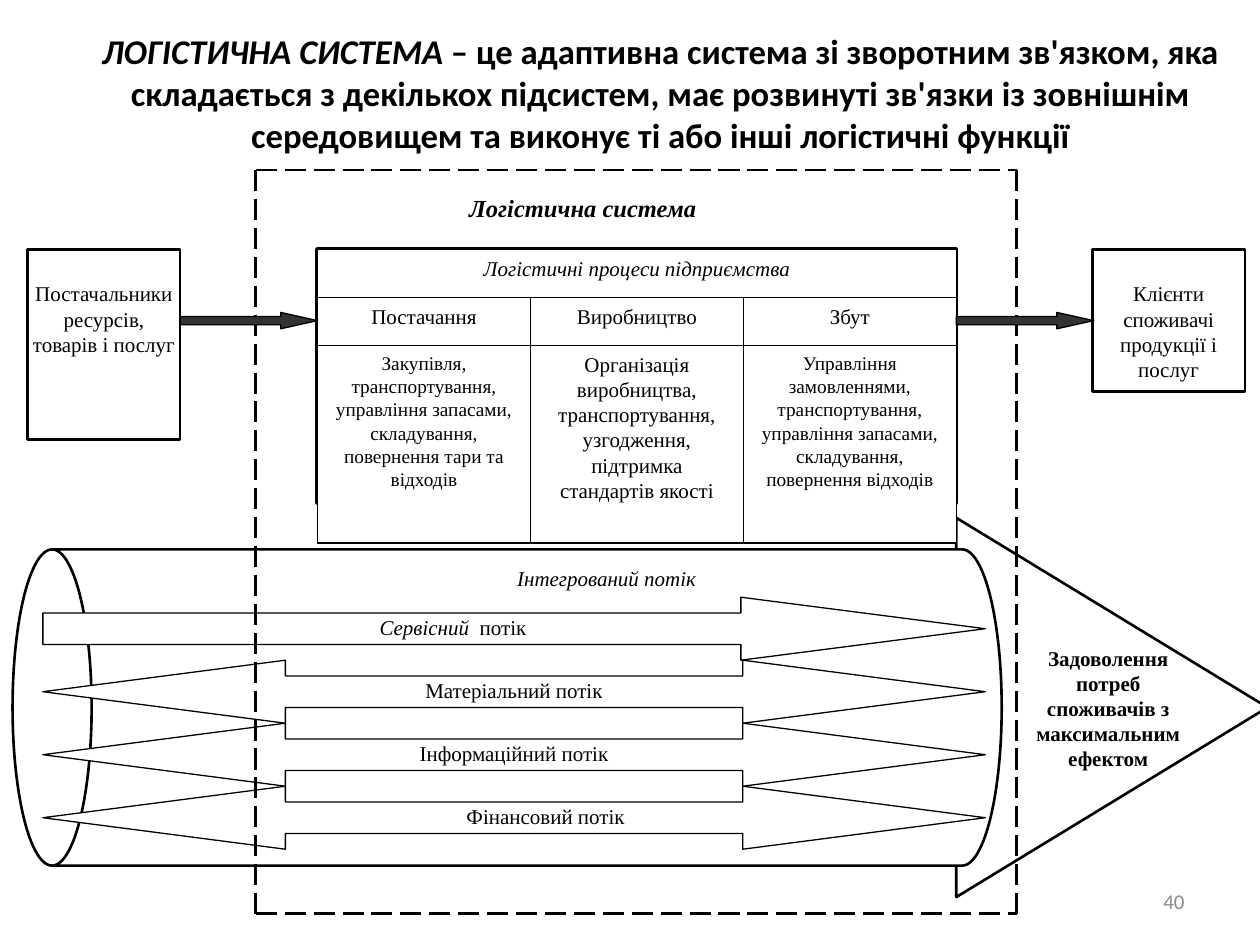
from dataclasses import dataclass

from lxml import etree
from pptx import Presentation
from pptx.dml.color import RGBColor
from pptx.enum import dml, shapes, text
from pptx.oxml import ns
from pptx.util import Inches, Pt

BLACK = RGBColor(0x00, 0x00, 0x00)
WHITE = RGBColor(0xFF, 0xFF, 0xFF)
DARK = RGBColor(0x33, 0x33, 0x33)
GREY = RGBColor(0x8C, 0x8C, 0x8C)
SERIF, SANS = "Times New Roman", "Calibri"
KIND, ALIGN, ANCHOR = shapes.MSO_SHAPE, text.PP_ALIGN, text.MSO_ANCHOR
INSET = (0.1, 0.05, 0.1, 0.05)
FLAT = (0.1, 0.01, 0.1, 0.01)


@dataclass
class Run:
    words: str
    size: float = 12
    bold: bool = False
    slant: bool = False
    font: str = SERIF
    ink: RGBColor = BLACK


@dataclass
class Box:
    left: float
    top: float
    width: float
    height: float
    runs: tuple[Run, ...] = ()
    kind: KIND = KIND.RECTANGLE
    line: float = 0.75
    inset: tuple[float, ...] = INSET
    adjust: tuple[float, ...] = ()
    turn: float = 0
    fill: RGBColor = WHITE

    def place(self) -> list[int]:
        return [Inches(n) for n in (self.left, self.top, self.width, self.height)]


def write(shape, runs: tuple[Run, ...], inset: tuple[float, ...] = INSET,
          align=ALIGN.CENTER, anchor=ANCHOR.TOP) -> None:
    frame = shape.text_frame
    frame.word_wrap = True
    frame.vertical_anchor = anchor
    (frame.margin_left, frame.margin_top,
     frame.margin_right, frame.margin_bottom) = map(Inches, inset)
    para = frame.paragraphs[0]
    para.alignment = align
    for item in runs:
        run = para.add_run()
        run.text = item.words
        font = run.font
        font.name, font.size = item.font, Pt(item.size)
        font.bold, font.italic = item.bold, item.slant
        font.color.rgb = item.ink


def draw(slide, box: Box):
    shape = slide.shapes.add_shape(box.kind, *box.place())
    shape.shadow.inherit = False
    shape.rotation = box.turn
    for spot, value in enumerate(box.adjust):
        shape.adjustments[spot] = value
    shape.fill.solid()
    shape.fill.fore_color.rgb = box.fill
    if box.line:
        shape.line.color.rgb = BLACK
        shape.line.width = Pt(box.line)
    else:
        shape.line.fill.background()
    if box.runs:
        write(shape, box.runs, box.inset)
    return shape


def label(slide, box: Box, align=ALIGN.CENTER, anchor=ANCHOR.TOP) -> None:
    """Add plain text without fill or outline."""
    shape = slide.shapes.add_textbox(*box.place())
    write(shape, box.runs, box.inset, align, anchor)


def dash(slide, start: tuple[float, float], end: tuple[float, float]) -> None:
    line = slide.shapes.add_connector(
        shapes.MSO_CONNECTOR.STRAIGHT, *map(Inches, start + end))
    line.line.color.rgb = BLACK
    line.line.width = Pt(1.5)
    line.line.dash_style = dml.MSO_LINE.LONG_DASH
    etree.SubElement(line._element.spPr, ns.qn("a:effectLst"))


# Table of processes
LEFT, TOP, WIDE, ROW, DEEP = 2.52, 1.98, 1.69, 0.38, 1.57
STAGES = (
    ("Постачання", 11, "Закупівля, транспортування, управління запасами, "
     "складування, повернення тари та відходів"),
    ("Виробництво", 12, "Організація виробництва, транспортування, "
     "узгодження, підтримка стандартів якості"),
    ("Збут", 11, "Управління замовленнями, транспортування, управління "
     "запасами, складування, повернення відходів"),
)
FLOWS = ("Матеріальний потік", "Інформаційний потік", "Фінансовий потік")
FLOW_TOP, FLOW_STEP = 4.74, 0.5


def ends(slide) -> None:
    """Draw the suppliers and the clients at the two sides."""
    draw(slide, Box(0.22, TOP, 1.21, 1.51,
                    (Run("Постачальники ресурсів, товарів і послуг"),),
                    line=1.5, inset=(0.02, 0.25, 0.02, 0.05)))
    draw(slide, Box(8.67, TOP, 1.21, 1.13,
                    (Run("Клієнти споживачі продукції і послуг"),),
                    line=1.5, inset=(0.1, 0.25, 0.1, 0.05)))


def grid(slide) -> None:
    draw(slide, Box(LEFT, TOP, 3 * WIDE, ROW,
                    (Run("Логістичні процеси підприємства", slant=True),)))
    for col, (name, size, tasks) in enumerate(STAGES):
        left = LEFT + col * WIDE
        draw(slide, Box(left, TOP + ROW, WIDE, ROW, (Run(name),)))
        draw(slide, Box(left, TOP + 2 * ROW, WIDE, DEEP, (Run(tasks, size),)))


def flows(slide) -> None:
    draw(slide, Box(LEFT, 4.49, 4.59, 0.25,
                    (Run("Інтегрований потік", slant=True),),
                    line=0, inset=(0.1, 0, 0.1, 0)))
    draw(slide, Box(0.34, FLOW_TOP, 7.48, FLOW_STEP,
                    (Run("Сервісний ", slant=True), Run(" потік")),
                    KIND.RIGHT_ARROW, inset=FLAT, adjust=(0.5, 3.88)))
    for row, name in reversed(list(enumerate(FLOWS, 1))):
        inset = (0.6, *FLAT[1:]) if row == len(FLOWS) else FLAT
        draw(slide, Box(0.34, FLOW_TOP + row * FLOW_STEP, 7.48, FLOW_STEP,
                        (Run(name),), KIND.LEFT_RIGHT_ARROW,
                        inset=inset, adjust=(0.5, 3.85)))


def border(slide) -> None:
    left, top, right, low = 2.03, 1.35, 8.07, 7.25
    dash(slide, (left, top), (right, top))
    dash(slide, (left, top), (left, low))
    dash(slide, (right, top), (right, low))
    dash(slide, (left, low), (right, low))


def main() -> None:
    deck = Presentation()
    deck.slide_width, deck.slide_height = Inches(10), Inches(7.5)
    slide = deck.slides.add_slide(deck.slide_layouts[6])

    label(slide, Box(0.6, 0.3, 9.28, 0.87, (
        Run("ЛОГІСТИЧНА СИСТЕМА ", 19.8, True, True, SANS),
        Run("– це адаптивна система зі зворотним зв'язком, яка складається "
            "з декількох підсистем, має розвинуті зв'язки із зовнішнім "
            "середовищем та виконує ті або інші логістичні функції",
            19.8, True, font=SANS))), anchor=ANCHOR.MIDDLE)

    draw(slide, Box(LEFT, TOP, 3 * WIDE, 2.01, line=2.5))
    draw(slide, Box(7.32, 4.38, 3.01, 2.47, kind=KIND.ISOSCELES_TRIANGLE,
                    line=1.5, turn=90))
    draw(slide, Box(2.77, 1.69, 2.51, 7.85, kind=KIND.CAN, line=1.5,
                    adjust=(0.25,), turn=270))
    ends(slide)
    grid(slide)
    draw(slide, Box(0.58, 1.48, 8.09, 0.38,
                    (Run("Логістична система", 14, True, True),), line=0))
    flows(slide)
    label(slide, Box(8.19, 5.12, 1.21, 1, (
        Run("Задоволення потреб споживачів з максимальним ефектом",
            bold=True),), inset=(0, 0, 0, 0)))
    border(slide)
    for left in (1.43, LEFT + 3 * WIDE):
        draw(slide, Box(left, 2.48, 1.09, 0.13, kind=KIND.RIGHT_ARROW,
                        adjust=(0.5, 2.25), fill=DARK))
    label(slide, Box(7.17, 6.95, 2.33, 0.4, (Run("40", font=SANS, ink=GREY),)),
          ALIGN.RIGHT, ANCHOR.MIDDLE)
    deck.save("out.pptx")


if __name__ == "__main__":
    main()
